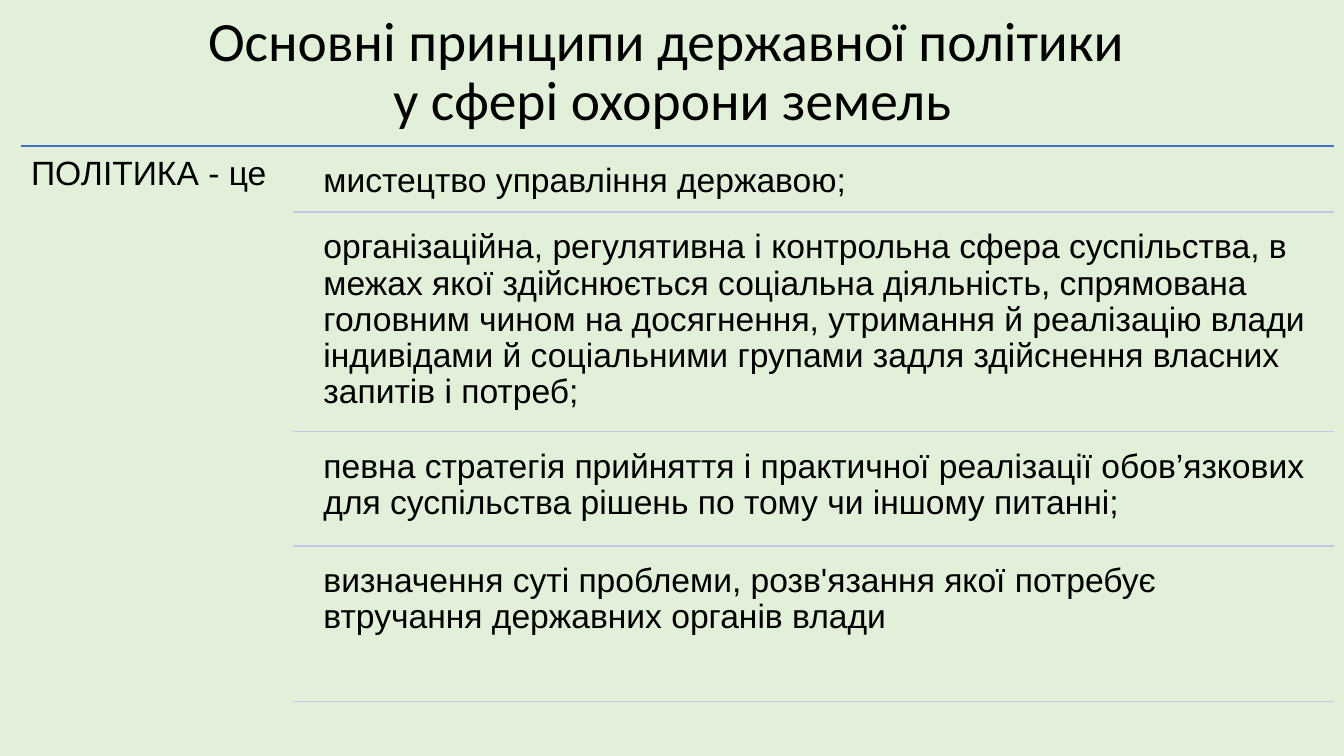
import pptx
import pptx.dml.color
import pptx.enum.shapes
import pptx.enum.text
import pptx.oxml
import pptx.oxml.ns
import pptx.util

Inches = pptx.util.Inches
Pt = pptx.util.Pt

INK = "000000"
PALE_GREEN = "E2F0D9"
BLUE = "4472C4"
PALE_BLUE = "C1C9E4"

TITLE = ["Основні принципи державної політики ", "у сфері охорони земель"]
TERM = "ПОЛІТИКА - це"
# Each meaning with the height of its row
MEANINGS = [
    ("мистецтво управління державою;", 0.58),
    ("організаційна, регулятивна і контрольна сфера суспільства, в межах якої "
     "здійснюється соціальна діяльність, спрямована головним чином на досягнення, "
     "утримання й реалізацію влади індивідами й соціальними групами задля "
     "здійснення власних запитів і потреб;", 2.1),
    ("певна стратегія прийняття і практичної реалізації обов’язкових для "
     "суспільства рішень по тому чи іншому питанні;", 1.06),
    ("визначення суті проблеми, розв'язання якої потребує втручання державних "
     "органів влади", 1.47),
]


def color(value):
    return pptx.dml.color.RGBColor.from_string(value)


def add_text(page, left, top, width, height, lines, font, size, inset=0.1):
    box = page.shapes.add_textbox(
        Inches(left), Inches(top), Inches(width), Inches(height))
    frame = box.text_frame
    frame.word_wrap = True
    frame.margin_left = frame.margin_right = Inches(0.1)
    frame.margin_top = frame.margin_bottom = Inches(inset)
    para = frame.paragraphs[0]
    para.line_spacing = 0.9
    for number, line in enumerate(lines):
        if number:
            para.add_line_break()
        span = para.add_run()
        span.text = line
        span.font.name = font
        span.font.size = Pt(size)
        span.font.color.rgb = color(INK)
    return frame


def add_rule(page, left, right, top, line_color):
    rule = page.shapes.add_connector(
        pptx.enum.shapes.MSO_CONNECTOR.STRAIGHT,
        Inches(left), Inches(top), Inches(right), Inches(top))
    rule.line.color.rgb = color(line_color)
    rule.line.width = Pt(1)
    properties = rule._element.spPr
    properties.append(pptx.oxml.parse_xml(
        "<a:effectLst %s/>" % pptx.oxml.ns.nsdecls("a")))


def add_title(page, left, top, width, height):
    frame = add_text(page, left, top, width, height, TITLE, "Calibri", 39.6, 0.05)
    frame.vertical_anchor = pptx.enum.text.MSO_ANCHOR.MIDDLE
    frame.paragraphs[0].alignment = pptx.enum.text.PP_ALIGN.CENTER


def add_definition(page, left, top, width, height):
    term_width = 2.7
    indent = 0.2
    gap = 0.075
    right = left + width
    rows_left = left + term_width

    # Term on the left, under the top rule
    add_rule(page, left, right, top, BLUE)
    add_text(page, left, top, term_width, height, [TERM], "Arial", 24)

    # Meanings stacked on the right, each closed by a rule
    for meaning, row_height in MEANINGS:
        top += gap
        add_text(page, rows_left + indent, top, width - term_width - indent,
                 row_height, [meaning], "Arial", 24)
        top += row_height
        add_rule(page, rows_left, right, top, PALE_BLUE)


def main():
    deck = pptx.Presentation()
    deck.slide_width = Inches(13.33)
    deck.slide_height = Inches(7.5)
    page = deck.slides.add_slide(deck.slide_layouts[6])
    page.background.fill.solid()
    page.background.fill.fore_color.rgb = color(PALE_GREEN)

    add_title(page, 0.92, 0.21, 11.5, 1.03)
    add_definition(page, 0.21, 1.45, 13.02, 5.59)

    deck.save("out.pptx")


if __name__ == "__main__":
    main()
